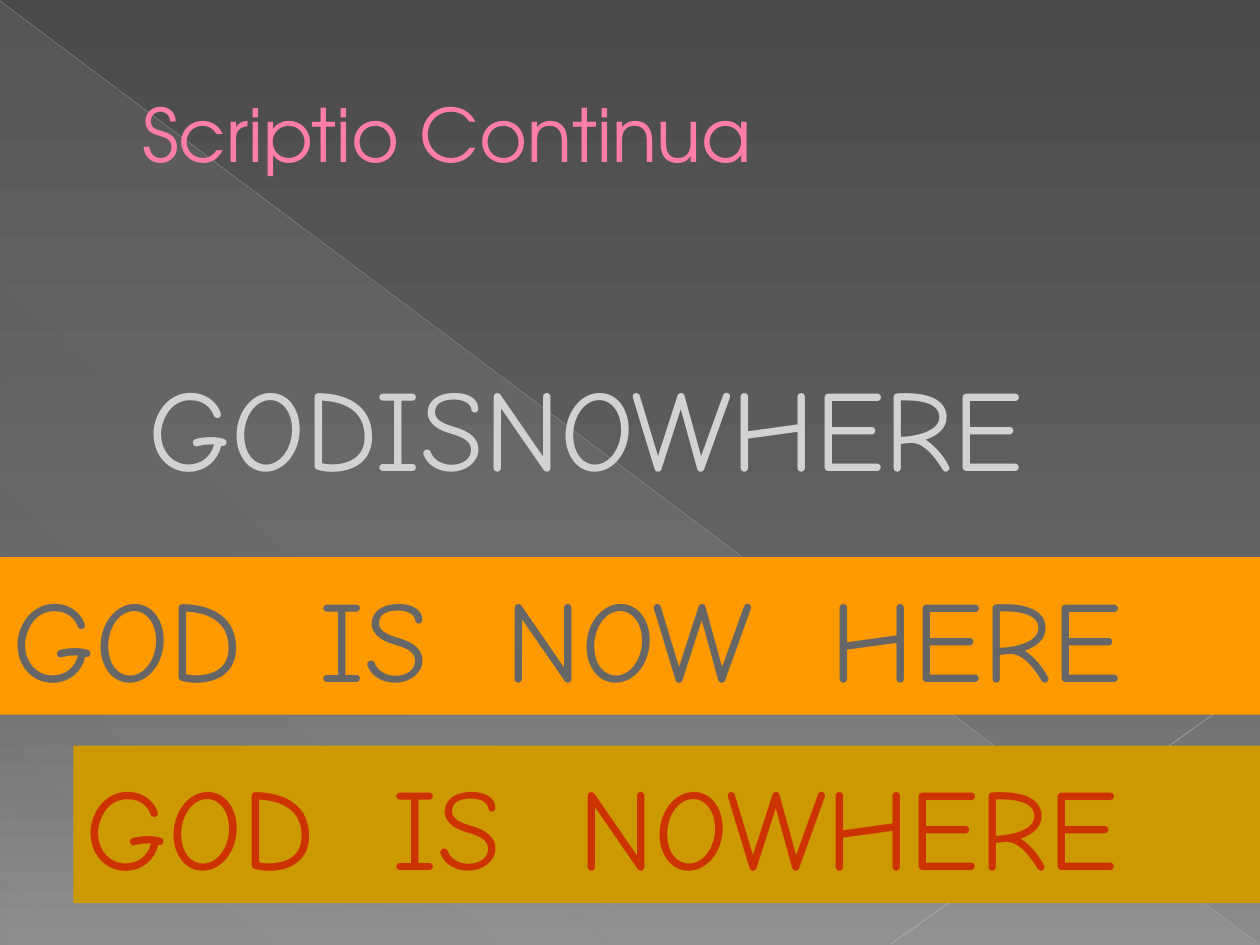
from dataclasses import dataclass

from lxml import etree
from pptx import Presentation
from pptx import util as u
from pptx.dml.color import RGBColor
from pptx.enum import shapes, text
from pptx.oxml.ns import qn

WIDE, HIGH = 25.4, 19.05
BAND = 3.18  # height of every phrase row


@dataclass(frozen=True)
class Theme:
    back: tuple = ((0, "4A4A4A", 100), (60, "626262", 100), (100, "8C8C8C", 100))
    sheen: tuple = ((0, "D2D2D2", 10), (70, "D2D2D2", 8), (100, "D2D2D2", 1))
    long: str = "BFBFBF"
    short: str = "C6C6C6"
    pink: str = "FF7DA7"
    edge: str = "B12761"
    pale: str = "D2D2D2"
    grey: str = "666666"
    red: str = "CC3300"
    orange: str = "FF9900"
    gold: str = "CC9900"
    head: tuple = ("TeX Gyre Adventor", 42)
    hand: tuple = ("Comic Neue", 66)


def tint(parent, color, alpha=100):
    """Add a colour with its opacity in percent."""
    node = etree.SubElement(parent, qn("a:srgbClr"), val=color)
    if alpha < 100:
        etree.SubElement(node, qn("a:alpha"), val=str(alpha * 1000))


class Deck:
    def __init__(self, theme):
        self.theme = theme
        self.prs = Presentation()
        self.prs.slide_width, self.prs.slide_height = u.Cm(WIDE), u.Cm(HIGH)
        self.slide = self.prs.slides.add_slide(self.prs.slide_layouts[6])

    def blend(self, fill, root, stops, angle):
        fill.gradient()
        fill.gradient_angle = 360 - angle  # counted anticlockwise
        ramp = next(root.iter(qn("a:gsLst")))
        for old in list(ramp):
            ramp.remove(old)
        for pos, color, alpha in stops:
            tint(etree.SubElement(ramp, qn("a:gs"), pos=str(pos * 1000)), color, alpha)

    def back(self, stops):
        self.blend(self.slide.background.fill, self.slide.element, stops, 90)

    def shape(self, kind, box):
        item = self.slide.shapes.add_shape(kind, *map(u.Cm, box))
        item.shadow.inherit = False
        item.line.fill.background()
        return item

    def sheen(self, box, stops):
        item = self.shape(shapes.MSO_SHAPE.RIGHT_TRIANGLE, box)
        self.blend(item.fill, item.element, stops, 133)

    def line(self, ends, color, width, alpha):
        item = self.slide.shapes.add_connector(
            shapes.MSO_CONNECTOR.STRAIGHT, *map(u.Cm, ends))
        item.line.width = u.Pt(width)
        item.line.fill.solid()
        fill = item.element.spPr.find(qn("a:ln")).find(qn("a:solidFill"))
        for old in list(fill):
            fill.remove(old)
        tint(fill, color, alpha)
        etree.SubElement(item.element.spPr, qn("a:effectLst"))

    def words(self, item, line, font, color):
        frame = item.text_frame
        form = {"word_wrap": True, "vertical_anchor": text.MSO_ANCHOR.MIDDLE,
                "auto_size": text.MSO_AUTO_SIZE.NONE}
        for key, value in form.items():
            setattr(frame, key, value)
        para = frame.paragraphs[0]
        para.alignment = text.PP_ALIGN.LEFT
        run = para.add_run()
        run.text = line
        for key, value in {"name": font[0], "size": u.Pt(font[1])}.items():
            setattr(run.font, key, value)
        run.font.color.rgb = RGBColor.from_string(color)
        return para, run

    def label(self, box, line, font, color):
        item = self.slide.shapes.add_textbox(*map(u.Cm, box))
        return self.words(item, line, font, color)

    def title(self, box, line):
        para, run = self.label(box, line, self.theme.head, self.theme.pink)
        prop = para._p.get_or_add_pPr()
        prop.set("marL", str(u.Cm(1.35)))
        prop.set("indent", "0")
        edge = etree.Element(qn("a:ln"), w=str(u.Pt(0.5)))
        tint(etree.SubElement(edge, qn("a:solidFill")), self.theme.edge)
        run._r.get_or_add_rPr().insert(0, edge)

    def band(self, left, top, line, fill, color):
        item = self.shape(shapes.MSO_SHAPE.RECTANGLE, (left, top, WIDE - left, BAND))
        item.fill.solid()
        item.fill.fore_color.rgb = RGBColor.from_string(fill)
        self.words(item, line, self.theme.hand, color)


def main():
    look = Theme()
    deck = Deck(look)

    # Backdrop
    deck.back(look.back)
    deck.sheen((0.02, 0.04, 25.36, 19), look.sheen)
    deck.line((0, 0.02, 25.38, 19.03), look.long, 0.39, 35)
    deck.line((WIDE, 13.73, 17.96, 19.03), look.short, 0.47, 45)

    # Title
    deck.title((1.27, 0.74, 22.86, 3.89), "Scriptio Continua")

    # The two readings, then the unspaced phrase
    deck.band(0, 11.23, "GOD  IS  NOW  HERE", look.orange, look.grey)
    deck.band(1.48, 15.03, "GOD  IS  NOWHERE", look.gold, look.red)
    deck.label((2.75, 6.99, 21.59, BAND), "GODISNOWHERE", look.hand, look.pale)

    deck.prs.save("out.pptx")


if __name__ == "__main__":
    main()
